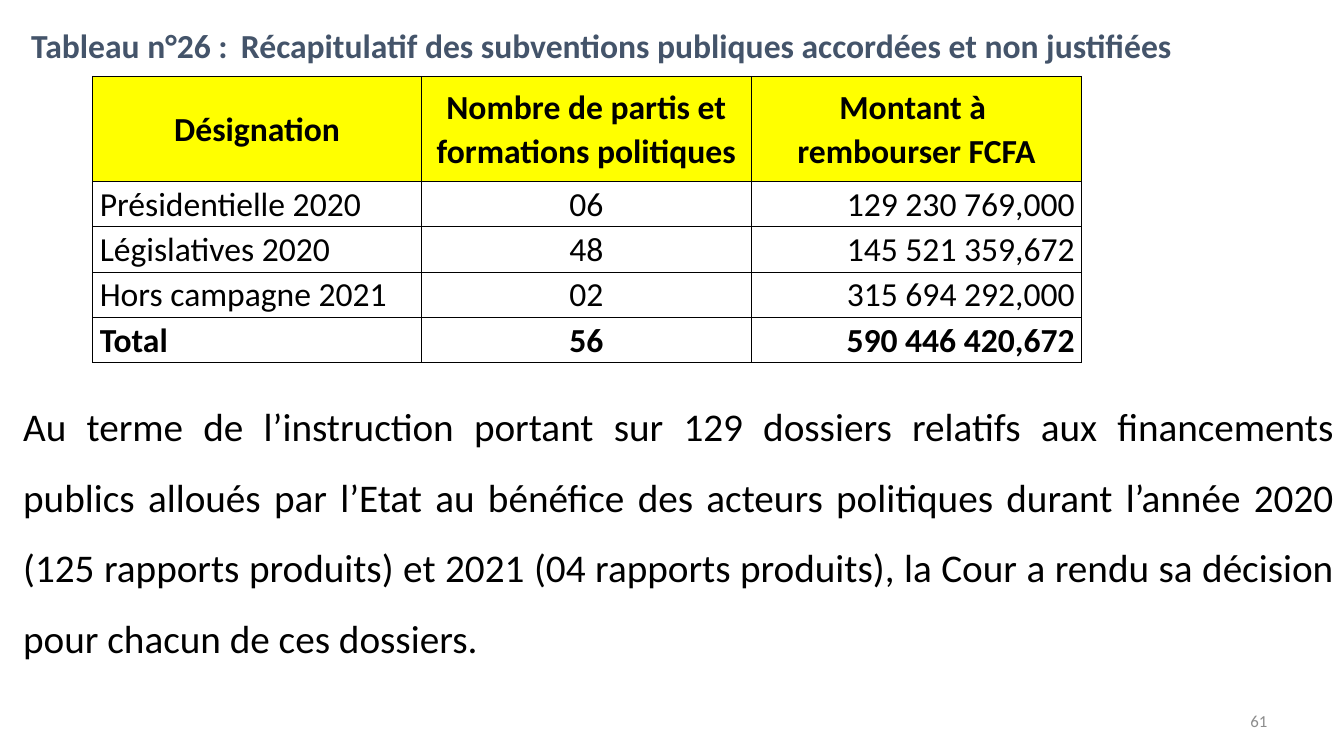
from lxml.etree import SubElement
from pptx import Presentation
from pptx.dml.color import RGBColor
from pptx.enum.text import MSO_ANCHOR, MSO_AUTO_SIZE, PP_ALIGN
from pptx.oxml.ns import qn
from pptx.util import Inches, Pt

COLORS = {
    "black": "000000",
    "white": "FFFFFF",
    "header": "FFFF00",
    "heading": "44546A",
    "page": "8C8C8C",
}


def format_paragraph(paragraph, size, color, align, spacing=1.0, bold=False):
    paragraph.alignment = align
    paragraph.line_spacing = spacing
    paragraph.space_before = Pt(0)
    paragraph.font.name = "Calibri"
    paragraph.font.size = Pt(size)
    paragraph.font.bold = bold
    paragraph.font.color.rgb = RGBColor.from_string(COLORS[color])


def place(shape, left, top, width, height, anchor):
    shape.left, shape.top = Inches(left), Inches(top)
    shape.width, shape.height = Inches(width), Inches(height)
    shape.text_frame.word_wrap = True
    shape.text_frame.auto_size = MSO_AUTO_SIZE.NONE
    shape.text_frame.vertical_anchor = anchor


prs = Presentation()
prs.slide_width, prs.slide_height = Inches(13.33), Inches(7.5)
slide = prs.slides.add_slide(prs.slide_layouts[1])

heading = slide.shapes.title
place(heading, 0.21, 0, 13.28, 0.64, MSO_ANCHOR.TOP)
heading.text_frame.text = "Tableau n°26 :\tRécapitulatif des subventions publiques accordées et non justifiées"
caption = heading.text_frame.paragraphs[0]
caption_props = caption._p.get_or_add_pPr()
caption_props.set("marL", str(Inches(1.08)))
caption_props.set("indent", str(Inches(-1.08)))
format_paragraph(caption, 24, "heading", PP_ALIGN.JUSTIFY, 1.5, True)

conclusion = slide.placeholders[1]
place(conclusion, 0.13, 3.71, 13.2, 2.85, MSO_ANCHOR.TOP)
conclusion.text_frame.text = (
    "Au terme de l’instruction portant sur 129 dossiers relatifs aux financements "
    "publics alloués par l’Etat au bénéfice des acteurs politiques durant l’année 2020 "
    "(125 rapports produits) et 2021 (04 rapports produits), la Cour a rendu sa décision "
    "pour chacun de ces dossiers."
)
decision = conclusion.text_frame.paragraphs[0]
decision_props = decision._p.get_or_add_pPr()
decision_props.set("marL", "0")
decision_props.set("indent", "0")
SubElement(decision_props, qn("a:buNone"))
format_paragraph(decision, 28, "black", PP_ALIGN.JUSTIFY, 1.5)

subsidies = [
    ("Désignation", "Nombre de partis et formations politiques", "Montant à \vrembourser FCFA"),
    ("Présidentielle 2020", "06", "129 230 769,000"),
    ("Législatives 2020", "48", "145 521 359,672"),
    ("Hors campagne 2021", "02", "315 694 292,000"),
    ("Total", "56", "590 446 420,672"),
]
column_aligns = [PP_ALIGN.LEFT, PP_ALIGN.CENTER, PP_ALIGN.RIGHT]
last_row = len(subsidies) - 1

table = slide.shapes.add_table(
    len(subsidies), 3, Inches(0.92), Inches(0.76), Inches(9.81), Inches(2.84)
).table
table.first_row = False
table.horz_banding = False
for column, width in zip(table.columns, (3.26, 3.27, 3.28)):
    column.width = Inches(width)

for r, values in enumerate(subsidies):
    is_header = r == 0
    table.rows[r].height = Inches(1.04 if is_header else 0.45)
    for c, value in enumerate(values):
        cell = table.cell(r, c)
        cell.text_frame.text = value
        cell.margin_left = cell.margin_right = Inches(0.07)
        cell.margin_top = cell.margin_bottom = 0
        cell.vertical_anchor = MSO_ANCHOR.MIDDLE if is_header else MSO_ANCHOR.TOP
        align = PP_ALIGN.CENTER if is_header else column_aligns[c]
        format_paragraph(
            cell.text_frame.paragraphs[0], 24, "black", align, 1.07, r in (0, last_row)
        )
        cell_props = cell._tc.get_or_add_tcPr()
        for side in ("a:lnL", "a:lnR", "a:lnT", "a:lnB"):
            border = SubElement(cell_props, qn(side), w=str(Pt(1)))
            border_fill = SubElement(border, qn("a:solidFill"))
            SubElement(border_fill, qn("a:srgbClr"), val=COLORS["black"])
        cell.fill.solid()
        cell.fill.fore_color.rgb = RGBColor.from_string(
            COLORS["header" if is_header else "white"]
        )

page_number = slide.shapes.add_textbox(0, 0, 0, 0)
place(page_number, 9.56, 6.95, 3.11, 0.4, MSO_ANCHOR.MIDDLE)
page_number.text_frame.text = "61"
format_paragraph(page_number.text_frame.paragraphs[0], 12, "page", PP_ALIGN.RIGHT)

prs.save("out.pptx")
